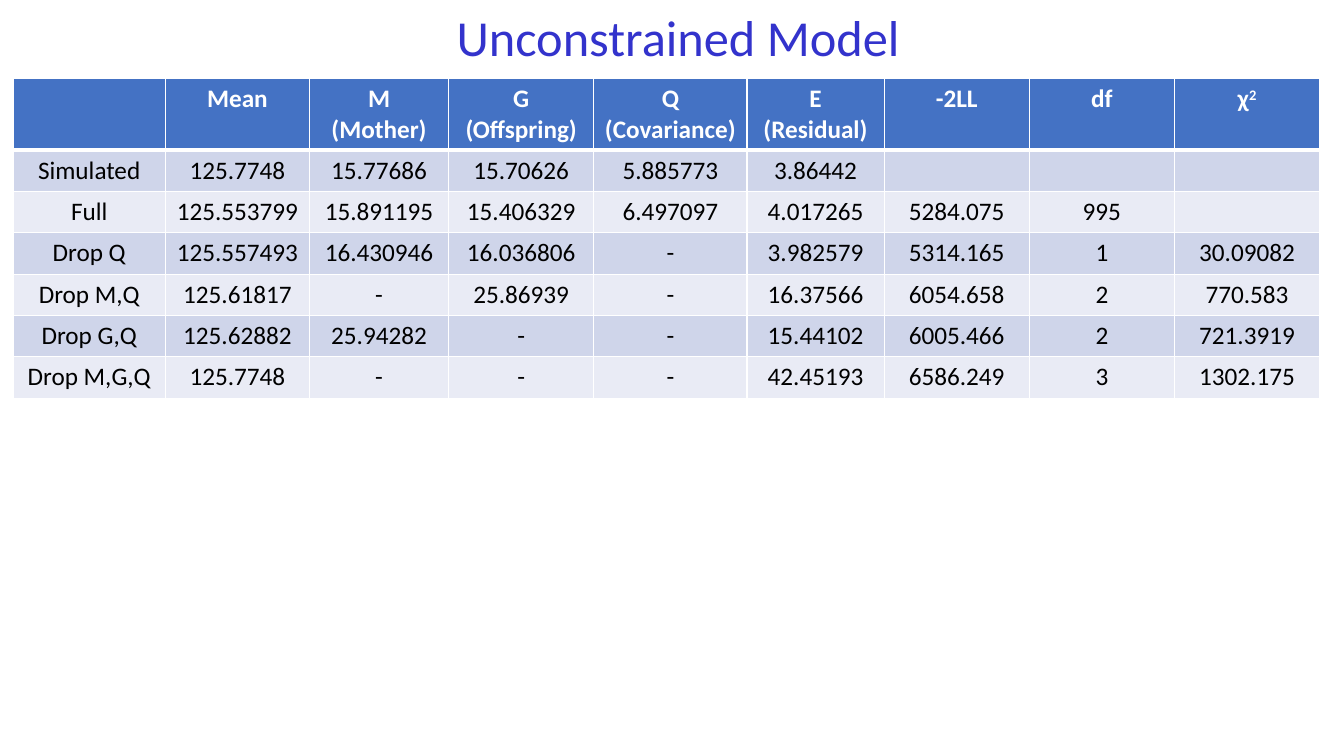
from dataclasses import dataclass

from lxml import etree
from pptx import Presentation, util as u
from pptx.dml.color import RGBColor
from pptx.enum import text
from pptx.oxml import ns


@dataclass(frozen=True)
class Theme:
    font: str = "Calibri"
    title_size: int = 36
    table_size: int = 18
    title: str = "3333CC"
    header: str = "4472C4"
    bands: tuple = ("CFD5EA", "E9EBF5")
    light: str = "FFFFFF"
    dark: str = "000000"
    rule: int = 1
    header_rule: int = 3


THEME = Theme()
SLIDE_WIDTH, SLIDE_HEIGHT = 13.33, 7.5
TITLE_BOX = (4.43, 0.01, 4.64, 0.71)
TABLE_BOX = (0.13, 0.78, 12.95, 3.16)
HEADER_HEIGHT = 0.7
COLUMN_WIDTHS = (1.51, 1.43, 1.38, 1.44, 1.52, 1.36, 1.44, 1.44, 1.44)
SUPERSCRIPT = "^"

HEADER = ("", "Mean", "M\n(Mother)", "G\n(Offspring)", "Q\n(Covariance)",
          "E\n(Residual)", "-2LL", "df", "χ^2")
MODELS = (
    ("Simulated", "125.7748", "15.77686", "15.70626", "5.885773", "3.86442", "", "", ""),
    ("Full", "125.553799", "15.891195", "15.406329", "6.497097", "4.017265",
     "5284.075", "995", ""),
    ("Drop Q", "125.557493", "16.430946", "16.036806", "-", "3.982579",
     "5314.165", "1", "30.09082"),
    ("Drop M,Q", "125.61817", "-", "25.86939", "-", "16.37566",
     "6054.658", "2", "770.583"),
    ("Drop G,Q", "125.62882", "25.94282", "-", "-", "15.44102",
     "6005.466", "2", "721.3919"),
    ("Drop M,G,Q", "125.7748", "-", "-", "-", "42.45193",
     "6586.249", "3", "1302.175"),
)


def style_font(font, size, color, bold=False):
    font.name = THEME.font
    font.size = u.Pt(size)
    font.bold = bold
    font.color.rgb = RGBColor.from_string(color)


def add_title(slide, box, title):
    shape = slide.shapes.add_textbox(*map(u.Inches, box))
    frame = shape.text_frame
    frame.word_wrap = False
    frame.auto_size = text.MSO_AUTO_SIZE.SHAPE_TO_FIT_TEXT
    frame.text = title
    style_font(frame.paragraphs[0].font, THEME.title_size, THEME.title)


def set_borders(cell, top, bottom):
    properties = cell._tc.get_or_add_tcPr()
    widths = {"L": THEME.rule, "R": THEME.rule, "T": top, "B": bottom}
    for side, width in widths.items():
        line = etree.SubElement(properties, ns.qn(f"a:ln{side}"), w=str(u.Pt(width)))
        fill = etree.SubElement(line, ns.qn("a:solidFill"))
        etree.SubElement(fill, ns.qn("a:srgbClr"), val=THEME.light)


def fill_cell(cell, content, row):
    """Write and style one cell; text after ^ is raised."""
    is_header = row == 0
    set_borders(cell,
                top=THEME.header_rule if row == 1 else THEME.rule,
                bottom=THEME.header_rule if is_header else THEME.rule)
    color = THEME.header if is_header else THEME.bands[(row - 1) % 2]
    cell.fill.solid()
    cell.fill.fore_color.rgb = RGBColor.from_string(color)

    base, _, raised = content.partition(SUPERSCRIPT)
    cell.text_frame.text = base
    for paragraph in cell.text_frame.paragraphs:
        paragraph.alignment = text.PP_ALIGN.CENTER
        style_font(paragraph.font, THEME.table_size,
                   THEME.light if is_header else THEME.dark, is_header)
    if raised:
        run = cell.text_frame.paragraphs[-1].add_run()
        run.text = raised
        run.font._element.set("baseline", "30000")


def add_model_table(slide, box, rows):
    frame = slide.shapes.add_table(len(rows), len(COLUMN_WIDTHS), *map(u.Inches, box))
    table = frame.table
    for column, width in zip(table.columns, COLUMN_WIDTHS):
        column.width = u.Inches(width)
    body_height = (box[3] - HEADER_HEIGHT) / (len(rows) - 1)
    for index, contents in enumerate(rows):
        table.rows[index].height = u.Inches(body_height if index else HEADER_HEIGHT)
        for cell, content in zip(table.rows[index].cells, contents):
            fill_cell(cell, content, index)


def main():
    presentation = Presentation()
    presentation.slide_width = u.Inches(SLIDE_WIDTH)
    presentation.slide_height = u.Inches(SLIDE_HEIGHT)
    slide = presentation.slides.add_slide(presentation.slide_layouts[6])
    add_model_table(slide, TABLE_BOX, (HEADER, *MODELS))
    add_title(slide, TITLE_BOX, "Unconstrained Model")
    presentation.save("out.pptx")


if __name__ == "__main__":
    main()
